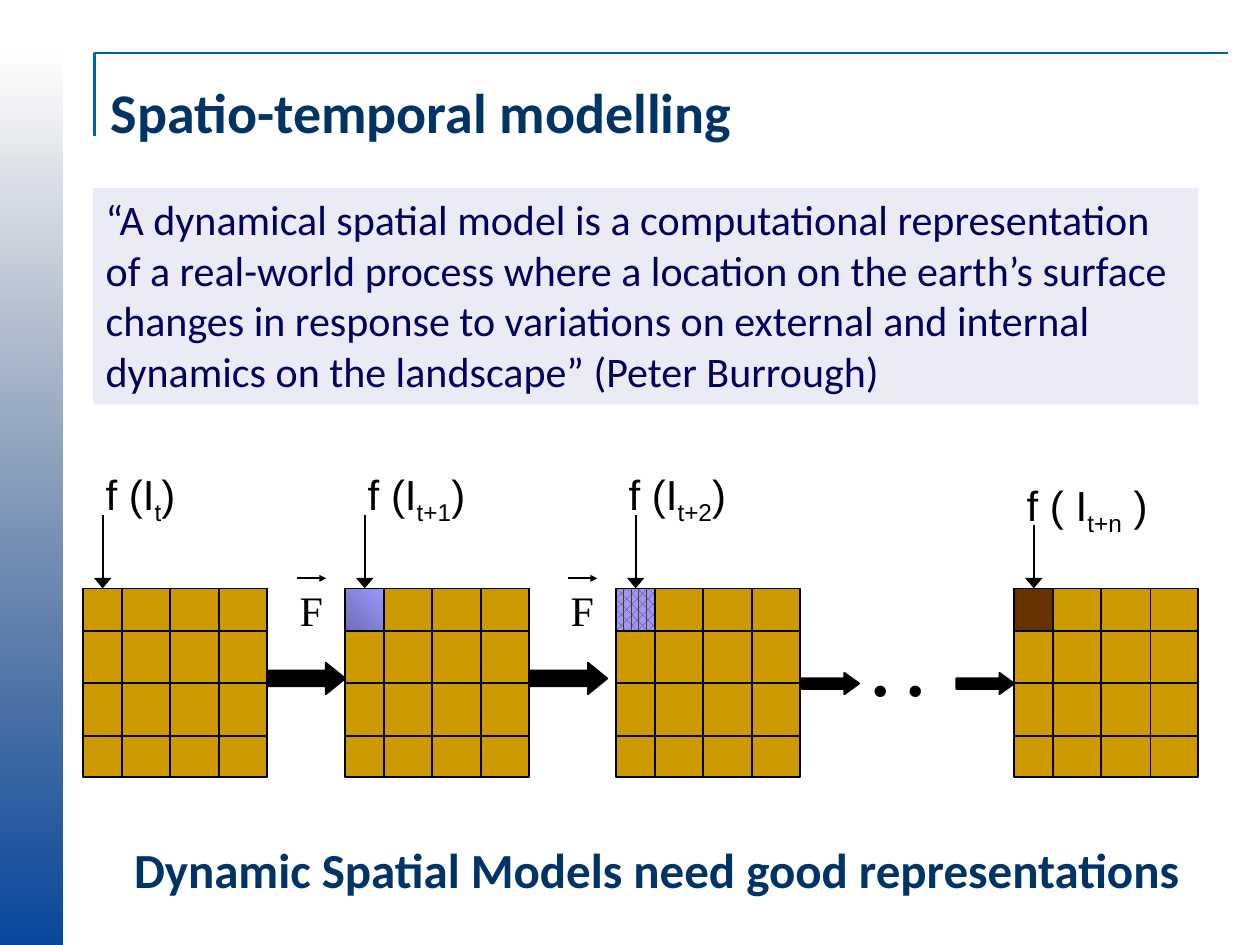
from typing import NamedTuple, Optional

from lxml.etree import SubElement
from pptx import Presentation
from pptx.dml.color import RGBColor
from pptx.enum.dml import MSO_PATTERN as Pattern
from pptx.enum.shapes import MSO_CONNECTOR as Connector, MSO_SHAPE as Preset
from pptx.enum.text import MSO_ANCHOR as Anchor, PP_ALIGN as Align
from pptx.oxml.ns import qn
from pptx.util import Inches, Pt

BLACK, NAVY, OCHRE, BROWN, LILAC = "000000", "003366", "CC9900", "663300", "9999FF"
GRID_TOP, GRID_WIDTH, GRID_HEIGHT = 4.67, 1.46, 1.5
ROW_OFFSETS, COLUMN_OFFSETS = (0.34, 0.75, 1.17), (0.31, 0.69, 1.08)


class State(NamedTuple):
    left: float
    label_left: float
    label_top: float
    label_width: float
    label: tuple[str, str, str]
    pointer_top: float
    cell: Optional[str]


class Step(NamedTuple):
    left: float
    top: float
    width: float
    height: float
    head: float


class Style(NamedTuple):
    font: str
    size: int
    color: str = BLACK
    bold: bool = False


STATES = (
    State(0.66, 0.74, 3.67, 1.4, ("f (I", "t", ")"), 4.09, None),
    State(2.74, 2.82, 3.67, 1.82, ("f (I", "t+1", ")"), 4.09, "gradient"),
    State(4.89, 4.89, 3.67, 1.83, ("f (I", "t+2", ")"), 4.09, "pattern"),
    State(8.05, 8.05, 3.76, 1.62, ("f ( I", "t+n", " )"), 4.17, "solid"),
)
STEPS = (
    Step(2.12, 5.26, 0.62, 0.25, 0.616),
    Step(4.2, 5.26, 0.62, 0.25, 0.616),
    Step(6.36, 5.34, 0.46, 0.17, 0.693),
    Step(7.59, 5.34, 0.46, 0.17, 0.693),
)
FORCE_LEFTS = (2.28, 4.43)
LABEL = Style("Arial", 24)
FORCE = Style("Times New Roman", 24)
DOTS = Style("Times New Roman", 40, bold=True)
TITLE = Style("Calibri", 32, NAVY, True)
CLOSING = Style("Calibri", 28, NAVY, True)
QUOTE = Style("Calibri", 24, "00005E")


def rgb(value: str) -> RGBColor:
    return RGBColor.from_string(value)


def add_block(shapes, preset, left: float, top: float, width: float, height: float,
              fill: Optional[str] = None, line: Optional[str] = BLACK):
    block = shapes.add_shape(preset, Inches(left), Inches(top), Inches(width), Inches(height))
    block.shadow.inherit = False
    if fill:
        block.fill.solid()
        block.fill.fore_color.rgb = rgb(fill)
    if line:
        block.line.color.rgb = rgb(line)
        block.line.width = Pt(1)
    else:
        block.line.fill.background()
    return block


def add_line(shapes, start: tuple[float, float], end: tuple[float, float],
             head: Optional[tuple[str, str]] = None):
    line = shapes.add_connector(Connector.STRAIGHT, *map(Inches, start + end))
    line.line.color.rgb = rgb(BLACK)
    line.line.width = Pt(1)
    if head:
        SubElement(line.line._get_or_add_ln(), qn("a:tailEnd"),
                   type="triangle", w=head[0], len=head[1])
    SubElement(line._element.spPr, qn("a:effectLst"))
    return line


def set_text(box, text: str, style: Style, anchor=Anchor.TOP, align=Align.LEFT) -> None:
    frame = box.text_frame
    frame.word_wrap = True
    frame.vertical_anchor = anchor
    frame.text = text
    para = frame.paragraphs[0]
    para.alignment = align
    for span in para.runs:
        format_span(span, style)


def format_span(span, style: Style) -> None:
    span.font.name = style.font
    span.font.size = Pt(style.size)
    span.font.bold = style.bold
    span.font.color.rgb = rgb(style.color)


def add_text(page, left: float, top: float, width: float, height: float,
             text: str, style: Style, anchor=Anchor.TOP, align=Align.LEFT):
    box = page.shapes.add_textbox(Inches(left), Inches(top), Inches(width), Inches(height))
    set_text(box, text, style, anchor, align)
    return box


def set_gradient(block, start: str, end: str, angle: float) -> None:
    block.fill.gradient()
    block.fill.gradient_angle = angle
    for stop, color in zip(block.fill.gradient_stops, (start, end)):
        stop.color.rgb = rgb(color)


def add_backdrop(page) -> None:
    band = add_block(page.shapes, Preset.RECTANGLE, 0, 0.42, 0.5, 7.08, line=None)
    set_gradient(band, "08479C", "042148", 90)
    SubElement(list(band._element.iter(qn("a:gs")))[-1][0], qn("a:alpha"), val="0")
    builder = page.shapes.build_freeform(Inches(0.75), Inches(1.08))
    builder.add_line_segments([(Inches(0.75), Inches(0.42)), (Inches(9.75), Inches(0.42))],
                              close=False)
    corner = builder.convert_to_shape()
    corner.shadow.inherit = False
    corner.fill.background()
    corner.line.color.rgb = rgb("006699")
    corner.line.width = Pt(1.5)


def add_grid(page, left: float) -> None:
    shapes = page.shapes.add_group_shape().shapes
    right, bottom = left + GRID_WIDTH, GRID_TOP + GRID_HEIGHT
    square = add_block(shapes, Preset.RECTANGLE, left, GRID_TOP, GRID_WIDTH, GRID_HEIGHT, OCHRE)
    for offset in ROW_OFFSETS:
        row = add_line(shapes, (left, GRID_TOP + offset), (right, GRID_TOP + offset))
        if offset == GRID_HEIGHT / 2:
            row.begin_connect(square, 1)
            row.end_connect(square, 3)
    for offset in COLUMN_OFFSETS:
        add_line(shapes, (left + offset, GRID_TOP), (left + offset, bottom))


def add_cell(page, left: float, kind: str):
    cell = add_block(page.shapes, Preset.RECTANGLE, left, GRID_TOP,
                     COLUMN_OFFSETS[0], ROW_OFFSETS[0], BROWN)
    if kind == "gradient":
        set_gradient(cell, "6D6DB6", LILAC, 45)
    elif kind == "pattern":
        cell.fill.patterned()
        cell.fill.pattern = Pattern.PERCENT_60
        cell.fill.fore_color.rgb = rgb(BROWN)
        cell.fill.back_color.rgb = rgb(LILAC)
    return cell


def add_state(page, state: State) -> None:
    add_grid(page, state.left)
    box = add_text(page, state.label_left, state.label_top, state.label_width, 0.5,
                   state.label[0], LABEL)
    para = box.text_frame.paragraphs[0]
    for text in state.label[1:]:
        span = para.add_run()
        span.text = text
        format_span(span, LABEL)
    para.runs[1].font._element.set("baseline", "-25000")
    center = state.left + COLUMN_OFFSETS[0] / 2
    pointer = add_line(page.shapes, (center, state.pointer_top), (center, GRID_TOP), ("lg", "med"))
    if state.cell:
        pointer.end_connect(add_cell(page, state.left, state.cell), 0)


def add_step(page, step: Step) -> None:
    arrow = add_block(page.shapes, Preset.RIGHT_ARROW, *step[:4], BLACK)
    arrow.adjustments[0] = 0.5
    arrow.adjustments[1] = step.head


def add_force(page, left: float) -> None:
    add_text(page, left, 4.59, 0.46, 0.5, "F", FORCE)
    add_line(page.shapes, (left + 0.08, 4.59), (left + 0.31, 4.59), ("sm", "sm"))


def main() -> None:
    """Build the spatio-temporal modelling slide."""
    deck = Presentation()
    deck.slide_width, deck.slide_height = Inches(10), Inches(7.5)
    page = deck.slides.add_slide(deck.slide_layouts[6])
    add_backdrop(page)
    for state in STATES:
        add_state(page, state)
    for step in STEPS:
        add_step(page, step)
    for left in FORCE_LEFTS:
        add_force(page, left)
    add_text(page, 6.82, 4.92, 0.85, 0.77, ". .", DOTS)
    add_text(page, 0.78, 0.47, 8.92, 0.83, "Spatio-temporal modelling", TITLE, Anchor.MIDDLE)
    add_text(page, 0.62, 6.48, 9.18, 0.83, "Dynamic Spatial Models need good representations",
             CLOSING, Anchor.MIDDLE, Align.CENTER)
    quote = add_block(page.shapes, Preset.RECTANGLE, 0.74, 1.49, 8.77, 1.72, "EBEBF5", None)
    set_text(quote, "“A dynamical spatial model is a computational representation of a real-world "
             "process where a location on the earth’s surface changes in response to variations on "
             "external and internal dynamics on the landscape” (Peter Burrough)", QUOTE)
    deck.save("out.pptx")


if __name__ == "__main__":
    main()
